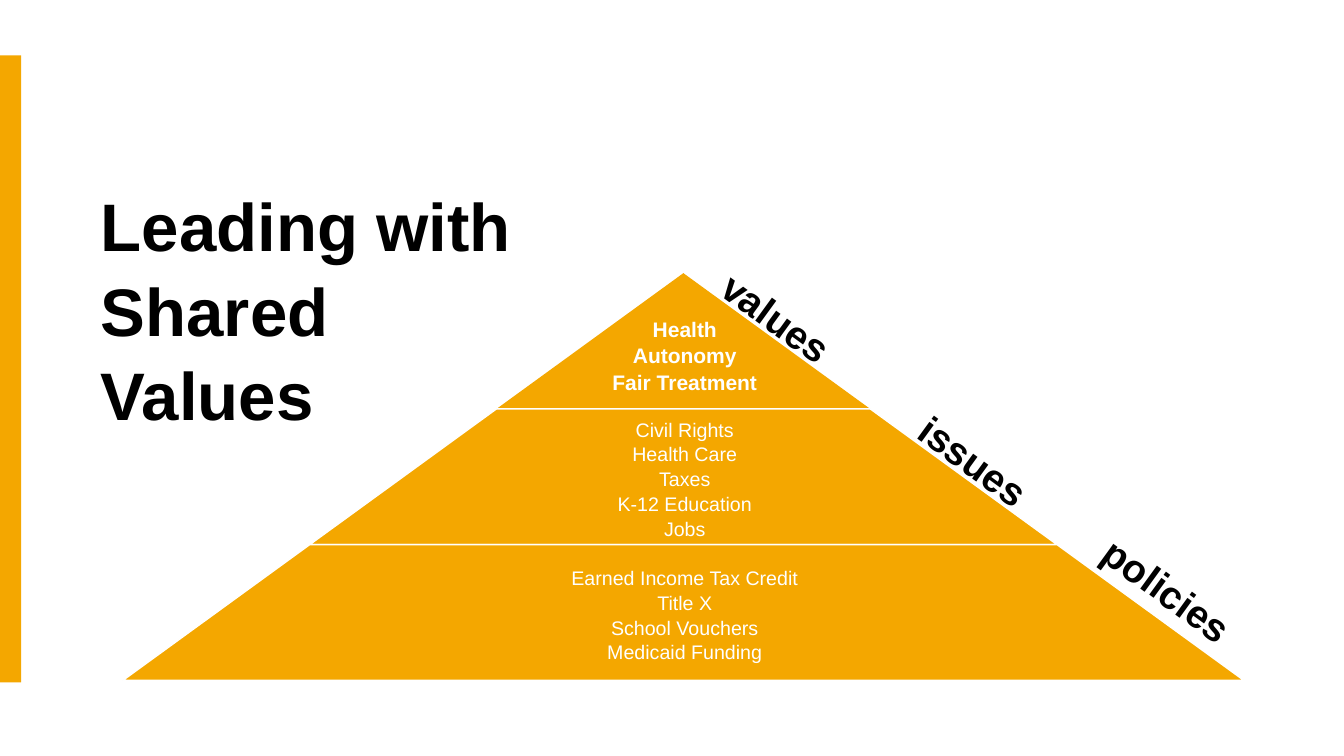
from dataclasses import dataclass

from pptx import Presentation
from pptx.dml.color import RGBColor
from pptx.enum.shapes import MSO_SHAPE
from pptx.enum.text import MSO_ANCHOR, MSO_AUTO_SIZE, PP_ALIGN
from pptx.util import Pt

RECT = MSO_SHAPE.RECTANGLE
TOP = MSO_ANCHOR.TOP
NO_FIT = MSO_AUTO_SIZE.NONE
LEFT, CENTER = PP_ALIGN.LEFT, PP_ALIGN.CENTER
TITLE_ONLY = 5


@dataclass(frozen=True)
class Theme:
    font: str = "Arial"
    gold: RGBColor = RGBColor(0xF4, 0xA7, 0x00)
    white: RGBColor = RGBColor(0xFF, 0xFF, 0xFF)
    black: RGBColor = RGBColor(0x00, 0x00, 0x00)
    title: int = 48
    label: int = 28
    values: int = 15
    body: int = 14
    spacing: float = 1.05
    label_spacing: float = 0.96


THEME = Theme()

# Each tier: lines, text size, bold, text offset from the tier's top, outlined
TIERS = [
    (["Health", "Autonomy", "Fair Treatment"], THEME.values, True, 30, False),
    (["Civil Rights", "Health Care", "Taxes", "K-12 Education", "Jobs"],
     THEME.body, False, 5.5, True),
    (["Earned Income Tax Credit", "Title X", "School Vouchers", "Medicaid Funding"],
     THEME.body, False, 14.6, True),
]

# Each label: text, offset from the pyramid's box, width
LABELS = [("values", 420.5, 23.1, 109.4),
          ("issues", 561.6, 124.6, 106.6),
          ("policies", 691.2, 217.5, 126)]
LABEL_HEIGHT, LABEL_ANGLE = 32.4, 36


def write(sp, lines, size, color, bold, align, spacing, wrap=True):
    tf = sp.text_frame
    tf.word_wrap = wrap
    tf.auto_size = NO_FIT
    tf.vertical_anchor = TOP
    tf.margin_left = tf.margin_top = tf.margin_right = tf.margin_bottom = 0
    for i, line in enumerate(lines):
        p = tf.add_paragraph() if i else tf.paragraphs[0]
        p.alignment = align
        p.line_spacing = spacing
        p.space_before = p.space_after = Pt(0)
        r = p.add_run()
        r.text = line
        r.font.name = THEME.font
        r.font.size = Pt(size)
        r.font.bold = bold
        r.font.color.rgb = color


def add_side_bar(s, x, y, w, h):
    sp = s.shapes.add_shape(RECT, Pt(x), Pt(y), Pt(w), Pt(h))
    sp.shadow.inherit = False
    sp.fill.solid()
    sp.fill.fore_color.rgb = THEME.gold
    sp.line.fill.background()


def add_title(s, x, y, w, h):
    sp = s.shapes.title
    sp.left, sp.top, sp.width, sp.height = Pt(x), Pt(y), Pt(w), Pt(h)
    write(sp, ["Leading with Shared Values"], THEME.title, THEME.black, True,
          LEFT, THEME.spacing)


def add_pyramid(s, x, y, w, h):
    mid = x + w / 2
    step_x, step_y = w / 2 / len(TIERS), h / len(TIERS)

    # Tiers, widening by one step each
    for i, (_, _, _, _, outlined) in enumerate(TIERS):
        top, bottom = y + i * step_y, y + (i + 1) * step_y
        upper, lower = i * step_x, (i + 1) * step_x
        corners = [(mid + upper, top), (mid + lower, bottom), (mid - lower, bottom)]
        fb = s.shapes.build_freeform(Pt(mid - upper), Pt(top))
        fb.add_line_segments([(Pt(px), Pt(py)) for px, py in corners], close=True)
        sp = fb.convert_to_shape()
        sp.shadow.inherit = False
        sp.fill.solid()
        sp.fill.fore_color.rgb = THEME.gold
        if outlined:
            sp.line.color.rgb = THEME.white
            sp.line.width = Pt(1)
        else:
            sp.line.fill.background()

    # Text of the tiers
    text_w = 274
    for i, (lines, size, bold, offset, _) in enumerate(TIERS):
        sp = s.shapes.add_textbox(Pt(mid - text_w / 2 + 1), Pt(y + i * step_y + offset),
                                  Pt(text_w), Pt(len(lines) * size * 1.21))
        write(sp, lines, size, THEME.white, bold, CENTER, THEME.spacing)

    # Labels along the right slope
    for text, dx, dy, label_w in LABELS:
        sp = s.shapes.add_textbox(Pt(x + dx), Pt(y + dy), Pt(label_w), Pt(LABEL_HEIGHT))
        sp.rotation = LABEL_ANGLE
        write(sp, [text], THEME.label, THEME.black, True, LEFT,
              THEME.label_spacing)


def main():
    prs = Presentation()
    prs.slide_width, prs.slide_height = Pt(960), Pt(540)
    s = prs.slides.add_slide(prs.slide_layouts[TITLE_ONLY])
    add_side_bar(s, 0, 39.6, 15.1, 447.8)
    add_title(s, 72, 128.8, 301.7, 175.7)
    add_pyramid(s, 87.8, 195.1, 800.7, 290.9)
    prs.save("out.pptx")


if __name__ == "__main__":
    main()
